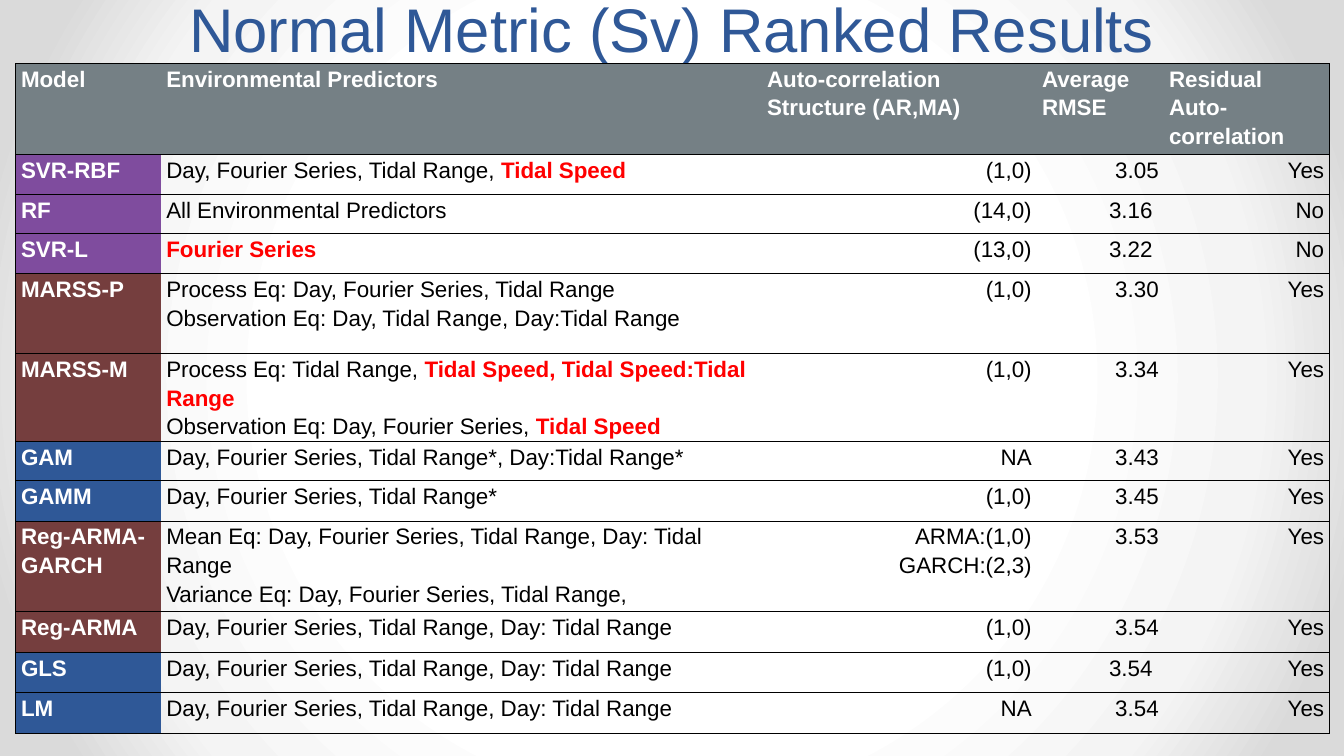
import pptx
import pptx.util
import pptx.dml.color
import pptx.enum.text
import pptx.oxml
import pptx.oxml.ns
from pptx.util import Cm

COLORS = {
    "title": "2F5897", "header": "758085", "line": "000000",
    "learning": "7F4C9E", "series": "753E3E", "regression": "2F5897",
    "light": "FFFFFF", "dark": "000000", "accent": "FF0000",
}
BACKGROUND_STOPS = [(50, "FFFFFF"), (76, "F4F4F4"), (92, "DADADA")]
ALIGN = pptx.enum.text.PP_ALIGN

# Font formats
LABEL = {"size": pptx.util.Pt(16), "name": "Arial", "bold": True, "color": "light"}
BODY = {**LABEL, "bold": False, "color": "dark"}
ACCENT = {**LABEL, "color": "accent"}
TITLE = {**BODY, "size": pptx.util.Pt(44), "color": "title"}

# Table content: text between bars is accented, a newline starts a paragraph
COLUMN_WIDTHS = [3.66, 15.14, 6.93, 3.2, 4.17]
HEADERS = ["Model", "Environmental Predictors", "Auto-correlation Structure (AR,MA)",
           "Average RMSE", "Residual Auto-correlation"]
HEADER_HEIGHT = 2.29
SHARED = "Day, Fourier Series, Tidal Range, Day: Tidal Range"
MODELS = [  # height, group, model, predictors, structure, RMSE, residual
    (1.02, "learning", "SVR-RBF", "Day, Fourier Series, Tidal Range, |Tidal Speed|",
     "(1,0)", "3.05", "Yes"),
    (0.97, "learning", "RF", "All Environmental Predictors", "(14,0)", "3.16 ", "No"),
    (1.02, "learning", "SVR-L", "|Fourier Series|", "(13,0)", "3.22 ", "No"),
    (2.01, "series", "MARSS-P",
     "Process Eq: Day, Fourier Series, Tidal Range\n"
     "Observation Eq: Day, Tidal Range, Day:Tidal Range", "(1,0)", "3.30", "Yes"),
    (2.21, "series", "MARSS-M",
     "Process Eq: Tidal Range, |Tidal Speed, Tidal Speed:Tidal Range|\n"
     "Observation Eq: Day, Fourier Series, |Tidal Speed|", "(1,0)", "3.34", "Yes"),
    (0.99, "regression", "GAM", "Day, Fourier Series, Tidal Range*, Day:Tidal Range*",
     "NA", "3.43", "Yes"),
    (1.02, "regression", "GAMM", "Day, Fourier Series, Tidal Range*", "(1,0)", "3.45", "Yes"),
    (2.29, "series", "Reg-ARMA-GARCH",
     f"Mean Eq: {SHARED}\nVariance Eq: Day, Fourier Series, Tidal Range,",
     "ARMA:(1,0)\nGARCH:(2,3)", "3.53", "Yes"),
    (1.02, "series", "Reg-ARMA", SHARED, "(1,0)", "3.54", "Yes"),
    (1.02, "regression", "GLS", SHARED, "(1,0)", "3.54 ", "Yes"),
    (1.02, "regression", "LM", SHARED, "NA", "3.54", "Yes"),
]


def rgb(name):
    return pptx.dml.color.RGBColor.from_string(COLORS[name])


def set_values(target, values):
    for name, value in values.items():
        setattr(target, name, value)


def add_run(p, text, fmt):
    r = p.add_run()
    r.text = text
    set_values(r.font, {k: v for k, v in fmt.items() if k != "color"})
    r.font.color.rgb = rgb(fmt["color"])


def set_background(s):
    s.background.fill.gradient()
    grad = s.element.find(".//" + pptx.oxml.ns.qn("a:gradFill"))
    stops = "".join(f'<a:gs pos="{pos * 1000}"><a:srgbClr val="{color}"/></a:gs>'
                    for pos, color in BACKGROUND_STOPS)
    grad.getparent().replace(grad, pptx.oxml.parse_xml(
        f'<a:gradFill {pptx.oxml.ns.nsdecls("a")} rotWithShape="1"><a:gsLst>{stops}</a:gsLst>'
        '<a:path path="circle"><a:fillToRect l="50000" t="50000" r="50000" b="50000"/>'
        '</a:path></a:gradFill>'))


def add_title(s, text):
    sp = s.shapes.title
    set_values(sp, {"left": Cm(1.7), "top": Cm(0), "width": Cm(30.48), "height": Cm(1.75)})
    tf = sp.text_frame
    set_values(tf, {"word_wrap": True, "vertical_anchor": pptx.enum.text.MSO_ANCHOR.BOTTOM,
                    "auto_size": pptx.enum.text.MSO_AUTO_SIZE.NONE})
    p = tf.paragraphs[0]
    set_values(p, {"alignment": ALIGN.CENTER, "line_spacing": pptx.util.Pt(58)})
    add_run(p, text, TITLE)


def set_borders(cell, sides):
    tcPr = cell._tc.get_or_add_tcPr()
    for side in sides:
        tcPr.append(pptx.oxml.parse_xml(
            f'<a:ln{side} {pptx.oxml.ns.nsdecls("a")} w="9525"><a:solidFill>'
            f'<a:srgbClr val="{COLORS["line"]}"/></a:solidFill></a:ln{side}>'))


def fill_cell(cell, text, fmt, align, fill=None):
    set_values(cell, {"margin_left": Cm(0.13), "margin_right": Cm(0.13),
                      "margin_top": Cm(0), "margin_bottom": Cm(0)})
    if fill:
        cell.fill.solid()
        cell.fill.fore_color.rgb = rgb(fill)
    else:
        cell.fill.background()
    tf = cell.text_frame
    for i, line in enumerate(text.split("\n")):
        p = tf.add_paragraph() if i else tf.paragraphs[0]
        set_values(p, {"alignment": align, "line_spacing": 1.15})
        for part, piece in enumerate(line.split("|")):
            if piece:
                add_run(p, piece, ACCENT if part % 2 else fmt)


def add_results_table(s):
    heights = [HEADER_HEIGHT] + [model[0] for model in MODELS]
    last = len(COLUMN_WIDTHS) - 1
    frame = s.shapes.add_table(len(heights), last + 1, Cm(0.4), Cm(1.6),
                               Cm(sum(COLUMN_WIDTHS)), Cm(sum(heights)))
    table = frame.table
    set_values(table, {"first_row": False, "horz_banding": False})
    style = table._tbl.tblPr.find(pptx.oxml.ns.qn("a:tableStyleId"))
    style.text = "{2D5ABB26-0587-4C30-8999-92F81FD0307C}"
    for column, width in zip(table.columns, COLUMN_WIDTHS):
        column.width = Cm(width)
    for row, height in zip(table.rows, heights):
        row.height = Cm(height)
        for col, cell in enumerate(row.cells):
            set_borders(cell, ("L" if col == 0 else "") + ("R" if col == last else "") + "TB")

    # Header row
    for col, text in enumerate(HEADERS):
        fill_cell(table.cell(0, col), text, LABEL, ALIGN.LEFT, "header")

    # One row per model
    for row, (_, group, name, *values) in enumerate(MODELS, 1):
        fill_cell(table.cell(row, 0), name, LABEL, ALIGN.LEFT, group)
        for col, text in enumerate(values, 1):
            fill_cell(table.cell(row, col), text, BODY, ALIGN.LEFT if col == 1 else ALIGN.RIGHT)


def main():
    prs = pptx.Presentation()
    set_values(prs, {"slide_width": Cm(33.87), "slide_height": Cm(19.05)})
    s = prs.slides.add_slide(prs.slide_layouts[5])
    set_background(s)
    add_title(s, "Normal Metric (Sv) Ranked Results")
    add_results_table(s)
    prs.save("out.pptx")


if __name__ == "__main__":
    main()
